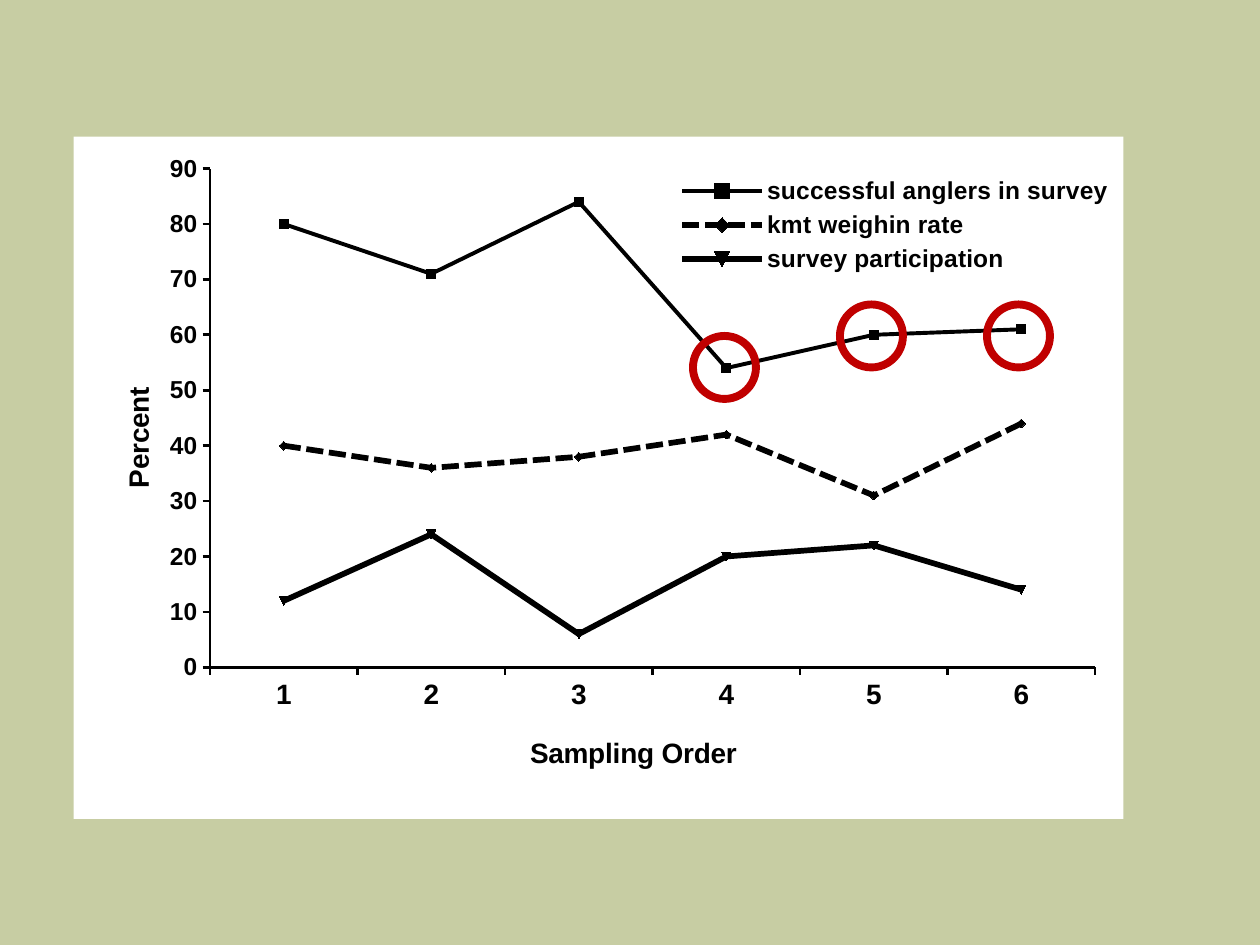
from lxml import etree
from pptx import Presentation
from pptx import util as u
from pptx.chart.data import CategoryChartData
from pptx.dml.color import RGBColor
from pptx.enum import chart as charts, dml, shapes
from pptx.oxml import parse_xml
from pptx.oxml.ns import nsdecls, qn

COLORS = {"background": "C7CDA3", "panel": "FFFFFF", "ink": "000000", "ring": "C00000"}

SERIES = [
    ("successful anglers in survey", (80, 71, 84, 54, 60, 61), 2.25, None),
    ("kmt weighin rate", (40, 36, 38, 42, 31, 44), 3.25, dml.MSO_LINE.SQUARE_DOT),
    ("survey participation", (12, 24, 6, 20, 22, 14), 3.25, None),
]

RINGS = [(396, 192), (480, 174), (564, 174)]


def set_values(target, values):
    for name, value in values.items():
        setattr(target, name, value)


class SlideBuilder:
    def __init__(self, slide, colors, font_name):
        self.slide = slide
        self.colors = colors
        self.font_name = font_name

    def color(self, name):
        return RGBColor.from_string(self.colors[name])

    def paint(self, fill, name):
        fill.solid()
        fill.fore_color.rgb = self.color(name)

    def background(self, name):
        self.paint(self.slide.background.fill, name)

    def font(self, font, size):
        set_values(font, {"name": self.font_name, "size": u.Pt(size), "bold": True})
        font.color.rgb = self.color("ink")

    def line(self, line, name, width, dash=None):
        self.paint(line.fill, name)
        set_values(line, {"width": u.Pt(width), "dash_style": dash})

    def layout(self, element, position, inner=False):
        for old in element.findall(qn("c:layout")):
            element.remove(old)
        layout = parse_xml(f"<c:layout {nsdecls('c')}><c:manualLayout/></c:layout>")
        entries = [("layoutTarget", "inner")] if inner else []
        entries += [("xMode", "edge"), ("yMode", "edge")]
        entries += zip("xywh", position)
        for tag, value in entries:
            etree.SubElement(layout[0], qn(f"c:{tag}")).set("val", str(value))
        overlay = element.find(qn("c:overlay"))
        if overlay is None:
            element.insert(0, layout)
        else:
            overlay.addprevious(layout)

    def axis(self, axis, title, size, position, rotation, values):
        set_values(axis, values)
        self.line(axis.format.line, "ink", 1.5)
        self.font(axis.tick_labels.font, size)
        axis_title = axis.axis_title
        frame = axis_title.text_frame
        frame.text = title
        self.font(frame.paragraphs[0].runs[0].font, 16)
        element = axis_title._element
        body = element.find(".//" + qn("a:bodyPr"))
        body.set("rot", str(rotation))
        body.set("vert", "horz")
        self.layout(element, position)

    def legend(self, chart, position):
        chart.has_legend = True
        legend = chart.legend
        set_values(legend, {"position": charts.XL_LEGEND_POSITION.RIGHT, "include_in_layout": False})
        self.font(legend.font, 14)
        self.layout(legend._element, position)

    def line_chart(self, box, categories, series_rows):
        data = CategoryChartData()
        data.categories = categories
        for name, values, _, _ in series_rows:
            data.add_series(name, values)
        frame = self.slide.shapes.add_chart(
            charts.XL_CHART_TYPE.LINE_MARKERS, *map(u.Pt, box), data)
        chart = frame.chart
        chart.has_title = False
        self.font(chart.font, 10)
        chart.plots[0].vary_by_categories = False
        for series, (_, _, width, dash) in zip(chart.plots[0].series, series_rows):
            series.smooth = False
            self.line(series.format.line, "ink", width, dash)
            marker = series.marker
            set_values(marker, {"style": charts.XL_MARKER_STYLE.AUTOMATIC, "size": 5})
            self.paint(marker.format.fill, "ink")
            self.paint(marker.format.line.fill, "ink")
        ticks = {
            "has_major_gridlines": False,
            "major_tick_mark": charts.XL_TICK_MARK.OUTSIDE,
            "minor_tick_mark": charts.XL_TICK_MARK.NONE,
        }
        scale = {"minimum_scale": 0, "maximum_scale": 90, "major_unit": 10}
        self.axis(chart.category_axis, "Sampling Order", 16, (0.43, 0.87), 0, ticks)
        self.axis(chart.value_axis, "Percent", 14, (0.04, 0.36), -5400000, {**ticks, **scale})
        self.legend(chart, (0.58, 0.05, 0.41, 0.16))
        space = chart._chartSpace
        chart_element = space.find(qn("c:chart"))
        self.layout(chart_element.find(qn("c:plotArea")), (0.13, 0.047, 0.843, 0.731), True)
        chart_element.addnext(parse_xml(
            f"<c:spPr {nsdecls('c', 'a')}><a:solidFill>"
            f"<a:srgbClr val=\"{self.colors['panel']}\"/></a:solidFill>"
            "<a:ln><a:noFill/></a:ln></c:spPr>"))

    def ring(self, left, top, size):
        shape = self.slide.shapes.add_shape(
            shapes.MSO_SHAPE.OVAL, *map(u.Pt, (left, top, size, size)))
        shape.shadow.inherit = False
        shape.fill.background()
        self.line(shape.line, "ring", 4.5)


def main():
    presentation = Presentation()
    set_values(presentation, {"slide_width": u.Pt(720), "slide_height": u.Pt(540)})
    slide = presentation.slides.add_slide(presentation.slide_layouts[6])
    builder = SlideBuilder(slide, COLORS, "Arial")
    builder.background("background")
    builder.line_chart((42, 78, 600, 390), [str(n) for n in range(1, 7)], SERIES)
    for left, top in RINGS:
        builder.ring(left, top, 36)
    presentation.save("out.pptx")


if __name__ == "__main__":
    main()
